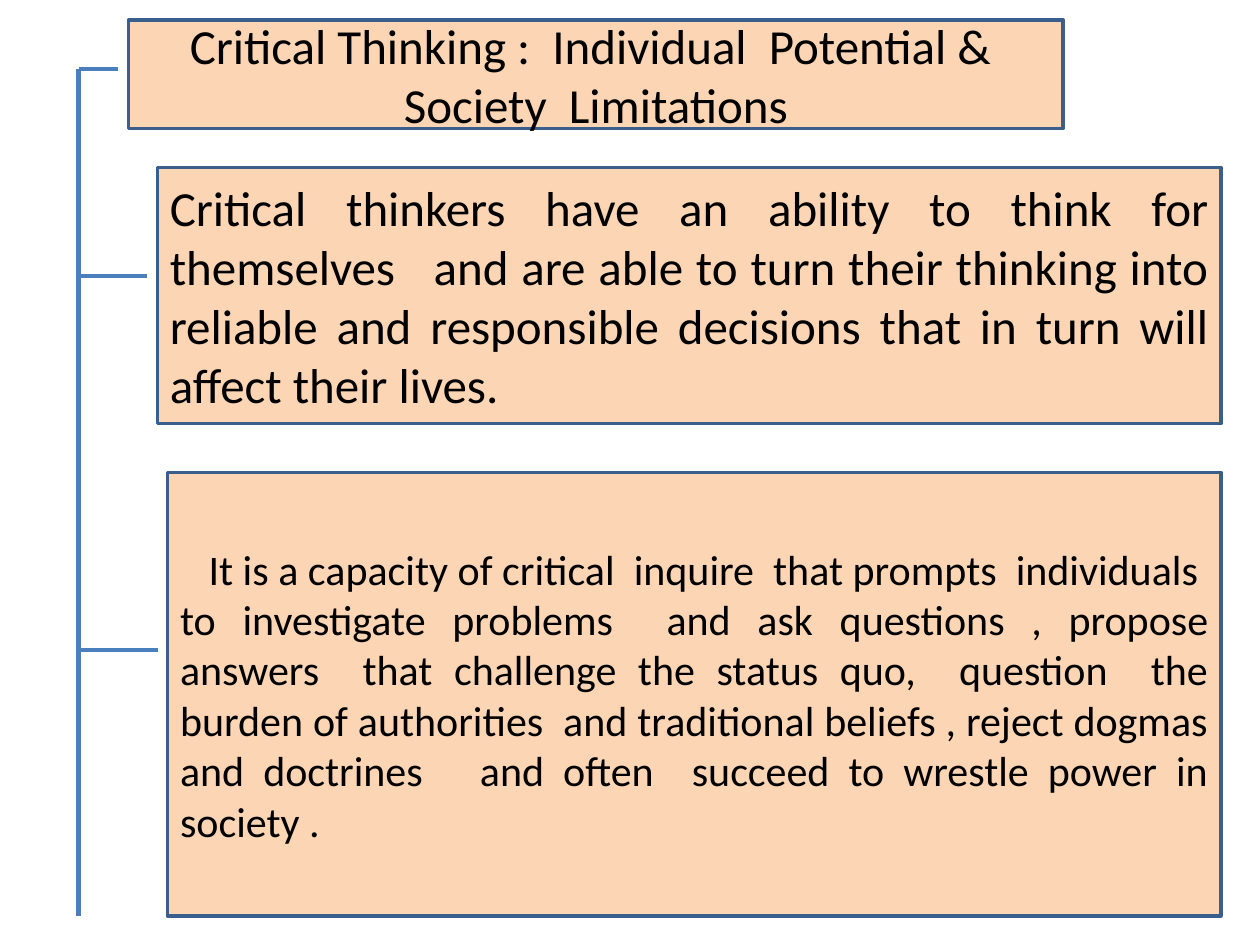
import pptx
import pptx.dml.color
import pptx.enum.shapes
import pptx.enum.text
import pptx.oxml.ns
import pptx.util
from lxml import etree

Pt = pptx.util.Pt
ALIGN = pptx.enum.text.PP_ALIGN

PEACH, BORDER, BRANCH, BLACK = "FCD5B5", "3A5F8C", "4B7EBC", "000000"

TITLE = "Critical Thinking :  Individual  Potential &  Society  Limitations"
ABILITY = (
    "Critical thinkers have an ability to think for themselves   and are able to turn "
    "their thinking into reliable and responsible decisions that in turn will affect "
    "their lives."
)
CAPACITY = (
    "It is a capacity of critical  inquire  that prompts  individuals  to investigate "
    "problems  and ask questions , propose answers  that challenge the status quo,  "
    "question  the burden of authorities  and traditional beliefs , reject dogmas and "
    "doctrines   and often  succeed to wrestle power in society ."
)

# text, (left, top, width, height), size, first-line indent
STATEMENTS = [
    (ABILITY, (90, 95.8, 607.7, 146.2), 28, 0),
    (CAPACITY, (95.8, 270, 601.9, 253.4), 24, 16.3),
]
TITLE_FRAME = (73.4, 11.5, 534.2, 61.9)

TRUNK_X, TRUNK_TOP, TRUNK_BOTTOM = 45, 39.6, 523.4
BRANCHES = [(TRUNK_TOP, 67.5), (157.7, 84.2), (371.5, 90)]  # y, right end


def color(value):
    return pptx.dml.color.RGBColor.from_string(value)


def format_box(box, text, frame, size, align, indent=0):
    box.left, box.top, box.width, box.height = map(Pt, frame)
    box.fill.solid()
    box.fill.fore_color.rgb = color(PEACH)
    box.line.color.rgb = color(BORDER)
    box.line.width = Pt(2)
    body = box.text_frame
    body.text = text
    body.word_wrap = True
    body.auto_size = pptx.enum.text.MSO_AUTO_SIZE.NONE
    body.vertical_anchor = pptx.enum.text.MSO_ANCHOR.MIDDLE
    para = body.paragraphs[0]
    para.alignment = align
    para.font.name = "Calibri"
    para.font.size = Pt(size)
    para.font.color.rgb = color(BLACK)
    if indent:
        para._p.get_or_add_pPr().set("indent", str(Pt(indent)))


def add_line(page, x1, y1, x2, y2, width):
    line = page.shapes.add_connector(
        pptx.enum.shapes.MSO_CONNECTOR.STRAIGHT, Pt(x1), Pt(y1), Pt(x2), Pt(y2)
    )
    line.line.color.rgb = color(BRANCH)
    line.line.width = Pt(width)
    etree.SubElement(line._element.spPr, pptx.oxml.ns.qn("a:effectLst"))


deck = pptx.Presentation()
deck.slide_width, deck.slide_height = Pt(720), Pt(540)
page = deck.slides.add_slide(deck.slide_layouts[5])

format_box(page.shapes.title, TITLE, TITLE_FRAME, 28, ALIGN.CENTER)
for text, frame, size, indent in STATEMENTS:
    box = page.shapes.add_shape(
        pptx.enum.shapes.MSO_SHAPE.RECTANGLE, *map(Pt, frame)
    )
    box.shadow.inherit = False
    format_box(box, text, frame, size, ALIGN.JUSTIFY, indent)

add_line(page, TRUNK_X, TRUNK_TOP, TRUNK_X, TRUNK_BOTTOM, 3)
for y, right in BRANCHES:
    add_line(page, TRUNK_X, y, right, y, 2.25)

deck.save("out.pptx")
